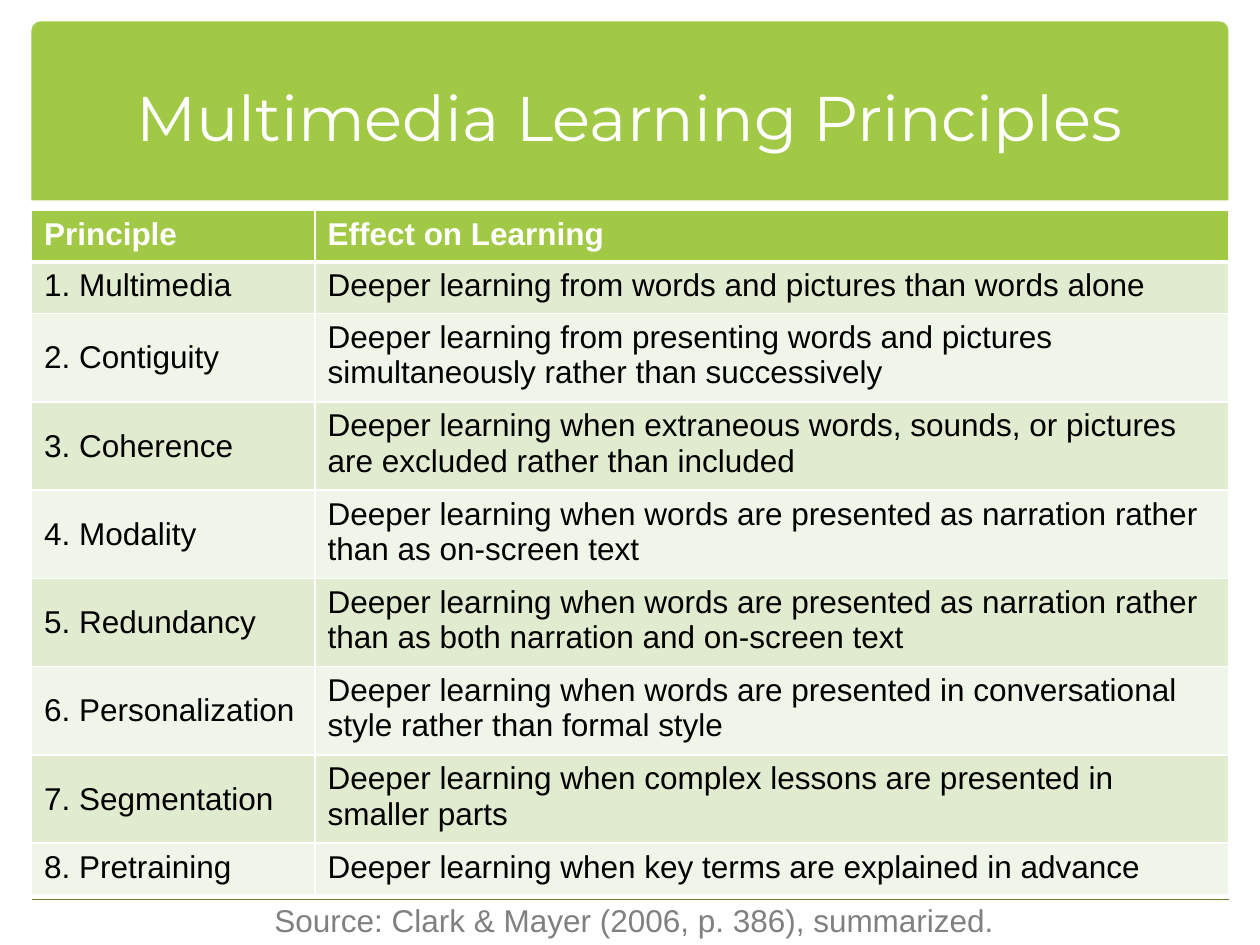
from dataclasses import dataclass

from lxml import etree
from pptx import Presentation
from pptx.dml.color import RGBColor
from pptx.enum import shapes, text
from pptx.oxml import ns
from pptx.util import Inches, Pt


@dataclass(frozen=True)
class Theme:
    green: str = "A2C946"
    olive: str = "6B7F3A"
    bands: tuple = ("E0EBCF", "F0F5E9")
    white: str = "FFFFFF"
    black: str = "000000"
    grey: str = "808080"
    heading: str = "Montserrat"
    body: str = "Arial"
    title_size: int = 36
    body_size: int = 18


THEME = Theme()


def write(frame, words, font=THEME.body, size=THEME.body_size, color=THEME.black,
          bold=False, align=text.PP_ALIGN.LEFT):
    paragraph = frame.paragraphs[0]
    paragraph.alignment = align
    run = paragraph.add_run()
    run.text = words
    run.font.name = font
    run.font.size = Pt(size)
    run.font.bold = bold
    run.font.color.rgb = RGBColor.from_string(color)


def add_borders(cell, **widths):
    """Draw white cell borders; widths in points are keyed by side: L, R, T, B."""
    properties = cell._tc.get_or_add_tcPr()
    for position, (side, width) in enumerate(widths.items()):
        border = etree.Element(ns.qn(f"a:ln{side}"), w=str(Pt(width)))
        fill = etree.SubElement(border, ns.qn("a:solidFill"))
        etree.SubElement(fill, ns.qn("a:srgbClr"), val=THEME.white)
        properties.insert(position, border)


PRINCIPLES = [
    ("Principle", "Effect on Learning"),
    ("1. Multimedia", "Deeper learning from words and pictures than words alone"),
    ("2. Contiguity", "Deeper learning from presenting words and pictures "
                      "simultaneously rather than successively"),
    ("3. Coherence", "Deeper learning when extraneous words, sounds, or pictures "
                     "are excluded rather than included"),
    ("4. Modality", "Deeper learning when words are presented as narration rather "
                    "than as on-screen text"),
    ("5. Redundancy", "Deeper learning when words are presented as narration rather "
                      "than as both narration and on-screen text"),
    ("6. Personalization", "Deeper learning when words are presented in conversational "
                           "style rather than formal style"),
    ("7. Segmentation", "Deeper learning when complex lessons are presented in "
                        "smaller parts"),
    ("8. Pretraining", "Deeper learning when key terms are explained in advance"),
]

deck = Presentation()
deck.slide_width, deck.slide_height = Inches(10), Inches(7.5)
slide = deck.slides.add_slide(deck.slide_layouts[6])
left, width = Inches(0.25), Inches(9.5)

# Title banner
banner = slide.shapes.add_shape(shapes.MSO_SHAPE.ROUND_2_SAME_RECTANGLE,
                                left, Inches(0.17), width, Inches(1.42))
banner.adjustments[0], banner.adjustments[1] = 0.05, 0
banner.shadow.inherit = False
banner.fill.solid()
banner.fill.fore_color.rgb = RGBColor.from_string(THEME.green)
banner.line.fill.background()

# Footer rule
footer_rule = slide.shapes.add_connector(shapes.MSO_CONNECTOR.STRAIGHT,
                                         left, Inches(7.14), left + width, Inches(7.14))
footer_rule.line.color.rgb = RGBColor.from_string(THEME.olive)
footer_rule.line.width = Pt(1)
etree.SubElement(footer_rule._element.spPr, ns.qn("a:effectLst"))

# Title
title = slide.shapes.add_textbox(Inches(0.33), Inches(0.3), Inches(9.33), Inches(1.25))
title.text_frame.word_wrap = True
title.text_frame.vertical_anchor = text.MSO_ANCHOR.MIDDLE
write(title.text_frame, "Multimedia Learning Principles", font=THEME.heading,
      size=THEME.title_size, color=THEME.white, align=text.PP_ALIGN.CENTER)

# Principles table: rows grow to fit wrapped text
table = slide.shapes.add_table(len(PRINCIPLES), 2, left, Inches(1.67),
                               width, Inches(5.42)).table
table.columns[0].width, table.columns[1].width = Inches(2.25), Inches(7.25)
last = len(PRINCIPLES) - 1
for row, entry in enumerate(PRINCIPLES):
    table.rows[row].height = Inches(0.41)
    header = row == 0
    for column, words in enumerate(entry):
        cell = table.cell(row, column)
        cell.fill.solid()
        cell.fill.fore_color.rgb = RGBColor.from_string(
            THEME.green if header else THEME.bands[(row - 1) % 2])
        add_borders(cell, L=1, R=1, T=3 if row == 1 else 1, B=3 if header else 1)
        if column == 0 and 1 < row < last:
            cell.vertical_anchor = text.MSO_ANCHOR.MIDDLE
        write(cell.text_frame, words, bold=header,
              color=THEME.white if header else THEME.black)

# Source
source = slide.shapes.add_textbox(Inches(2.08), Inches(7.1), Inches(5.92), Inches(0.4))
source.text_frame.word_wrap = True
source.text_frame.auto_size = text.MSO_AUTO_SIZE.SHAPE_TO_FIT_TEXT
write(source.text_frame, "Source: Clark & Mayer (2006, p. 386), summarized.",
      color=THEME.grey)

deck.save("out.pptx")
